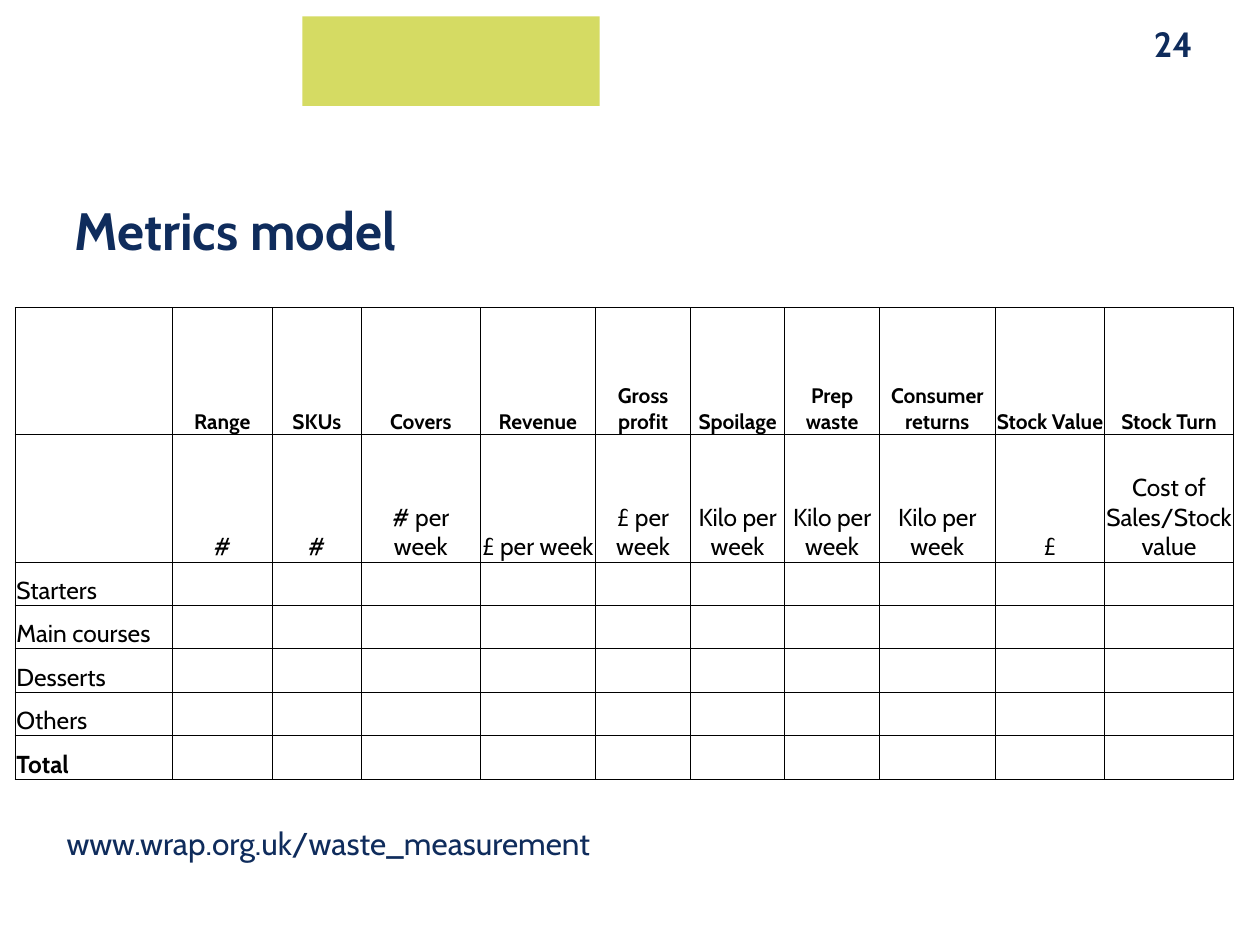
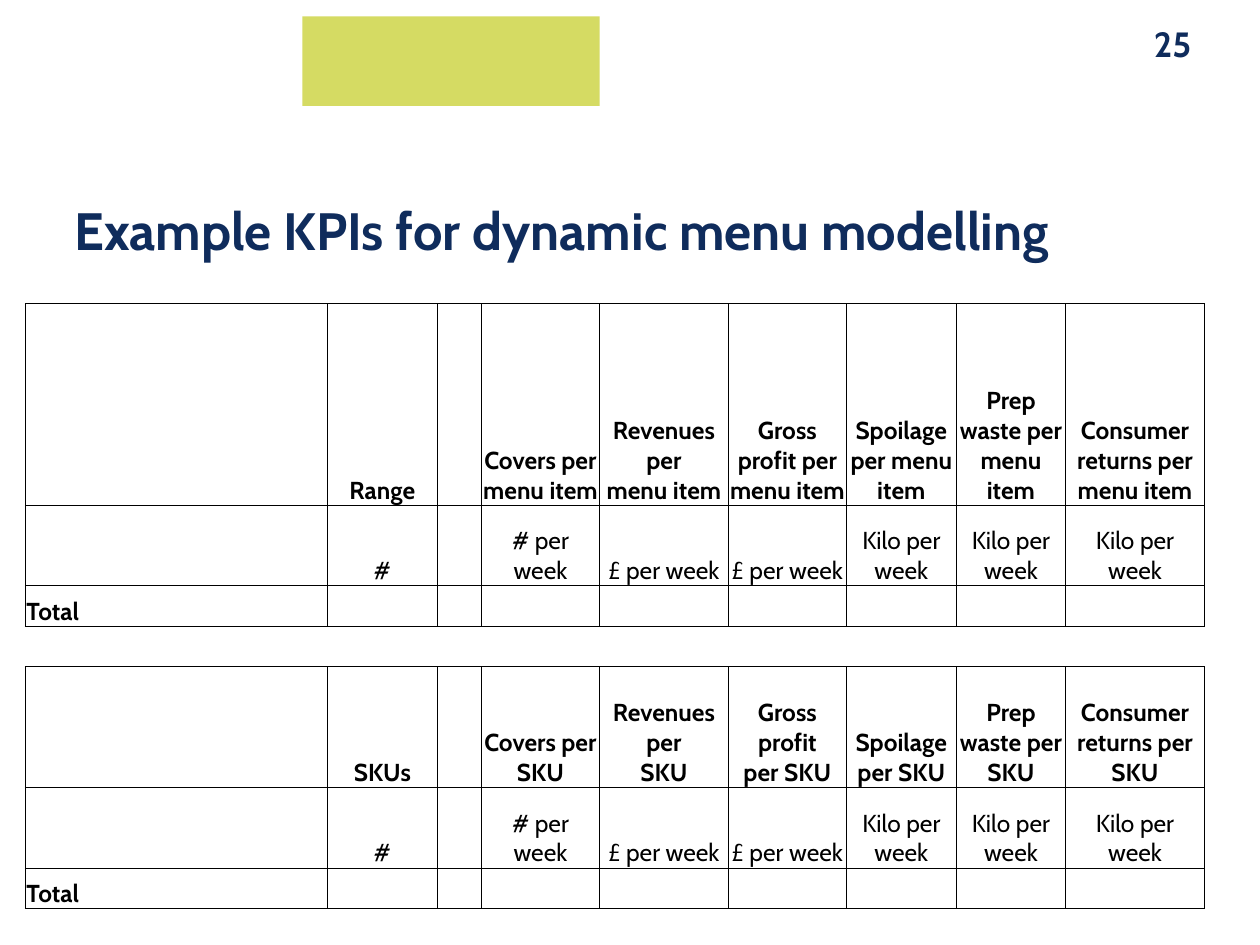
from lxml.etree import SubElement
from pptx import Presentation
from pptx.dml.color import RGBColor
from pptx.enum.shapes import MSO_SHAPE
from pptx.enum.text import MSO_ANCHOR, PP_ALIGN
from pptx.oxml.ns import qn
from pptx.util import Inches, Pt

COLORS = {"navy": "0F2C5C", "lime": "D5DB63", "ink": "000000", "paper": "FFFFFF"}
FONT = "Cabin"


def color(name):
    return RGBColor.from_string(COLORS[name])


def write(frame, text, size=14, bold=False, tint="ink", align=PP_ALIGN.LEFT):
    """Fill a text frame, one paragraph for each line of text."""
    for i, line in enumerate(text.split("\n")):
        para = frame.paragraphs[0] if i == 0 else frame.add_paragraph()
        para.alignment = align
        if not line:  # keeps an empty cell from growing its row
            SubElement(para._p, qn("a:endParaRPr"), sz=str(size * 100))
            continue
        run = para.add_run()
        run.text = line
        font = run.font
        font.name, font.size, font.bold = FONT, Pt(size), bold
        font.color.rgb = color(tint)


class Deck:
    def __init__(self):
        self.prs = Presentation()
        self.prs.slide_width, self.prs.slide_height = Inches(10), Inches(7.5)
        self.slide = None

    def page(self, number, title):
        """Start a slide with its number, lime band and title."""
        self.slide = self.prs.slides.add_slide(self.prs.slide_layouts[6])
        back = self.slide.background.fill
        back.solid()
        back.fore_color.rgb = color("paper")
        self.text(str(number), 9.06, 0.13, 0.94, 0.44, size=20, bold=True)
        self.band(2.4, 0.13, 2.36, 0.71)
        self.text(title, 0.59, 1.57, 9.1, 0.58, inset=False, size=30, bold=True)

    def text(self, text, left, top, width, height, inset=True, **style):
        box = self.slide.shapes.add_textbox(
            Inches(left), Inches(top), Inches(width), Inches(height))
        frame = box.text_frame
        frame.word_wrap = True
        if not inset:
            frame.margin_left = frame.margin_right = 0
            frame.margin_top = frame.margin_bottom = 0
        write(frame, text, tint="navy", **style)

    def band(self, left, top, width, height):
        shape = self.slide.shapes.add_shape(
            MSO_SHAPE.RECTANGLE,
            Inches(left), Inches(top), Inches(width), Inches(height))
        shape.shadow.inherit = False
        shape.fill.solid()
        shape.fill.fore_color.rgb = color("lime")
        shape.line.fill.background()

    def border(self, cell, sides):
        """Draw thin lines on the given sides and clear the others."""
        props = cell._tc.get_or_add_tcPr()
        for side in "LRTB":
            line = SubElement(props, qn(f"a:ln{side}"), w=str(Pt(0.5)))
            if side in sides:
                fill = SubElement(line, qn("a:solidFill"))
                SubElement(fill, qn("a:srgbClr"), val=COLORS["ink"])
            else:
                SubElement(line, qn("a:noFill"))

    def table(self, left, top, cols, rows):
        """Each row is (height, size, bold, texts); no texts makes a gap."""
        grid = self.slide.shapes.add_table(
            len(rows), len(cols), Inches(left), Inches(top),
            Inches(sum(cols)), Inches(sum(row[0] for row in rows))).table
        grid.first_row = grid.horz_banding = False
        for col, width in zip(grid.columns, cols):
            col.width = Inches(width)
        for r, (height, size, bold, texts) in enumerate(rows):
            grid.rows[r].height = Inches(height)
            for c in range(len(cols)):
                cell = grid.cell(r, c)
                cell.vertical_anchor = MSO_ANCHOR.BOTTOM
                cell.margin_left = cell.margin_right = Inches(0.01)
                cell.margin_top, cell.margin_bottom = Inches(0.01), 0
                self.border(cell, "LRTB" if texts else "TB")
                cell.fill.background()
                write(cell.text_frame, texts[c] if c < len(texts) else "",
                      size=size, bold=bold,
                      align=PP_ALIGN.CENTER if c else PP_ALIGN.LEFT)


COUNT, MONEY, KILO = "# per week", "£ per week", "Kilo per week"


def metrics(deck):
    deck.page(24, "Metrics model")
    heads = ["", "Range", "SKUs", "Covers", "Revenue", "Gross profit", "Spoilage",
             "Prep waste", "Consumer returns", "Stock Value", "Stock Turn"]
    units = ["", "#", "#", COUNT, MONEY, MONEY, KILO, KILO, KILO, "£",
             "Cost of Sales/Stock value"]
    names = ["Starters", "Main courses", "Desserts", "Others", "Total"]
    rows = [(1.01, 12, True, heads), (1.01, 14, False, units)]
    rows += [(0.345, 14, name == "Total", [name]) for name in names]
    cols = [1.25, 0.79, 0.71, 0.94, 0.92, 0.75, 0.75, 0.75, 0.92, 0.87, 1.02]
    deck.table(0.12, 2.44, cols, rows)
    deck.text("www.wrap.org.uk/waste_measurement", 0.43, 6.49, 9.21, 0.4, size=18)


def ratios(deck):
    deck.page(25, "Example KPIs for dynamic menu modelling")
    units = ["", "#", "", COUNT, MONEY, MONEY, KILO, KILO, KILO]

    def block(height, base, item, profit):
        heads = ["", base, "", f"Covers per {item}", f"Revenues per\n{item}", profit]
        heads += [f"{name} per {item}"
                  for name in ("Spoilage", "Prep waste", "Consumer returns")]
        return [(height, 14, True, heads), (0.64, 14, False, units),
                (0.32, 14, True, ["Total"])]

    rows = block(1.6, "Range", "menu item", "Gross profit per menu item")
    rows += [(0.32, 14, False, [])]
    rows += block(0.96, "SKUs", "SKU", "Gross profit\nper SKU")
    cols = [2.4, 0.87, 0.35, 0.94, 1.02, 0.94, 0.87, 0.87, 1.1]
    deck.table(0.2, 2.41, cols, rows)


def main():
    deck = Deck()
    metrics(deck)
    ratios(deck)
    deck.prs.save("out.pptx")


if __name__ == "__main__":
    main()
